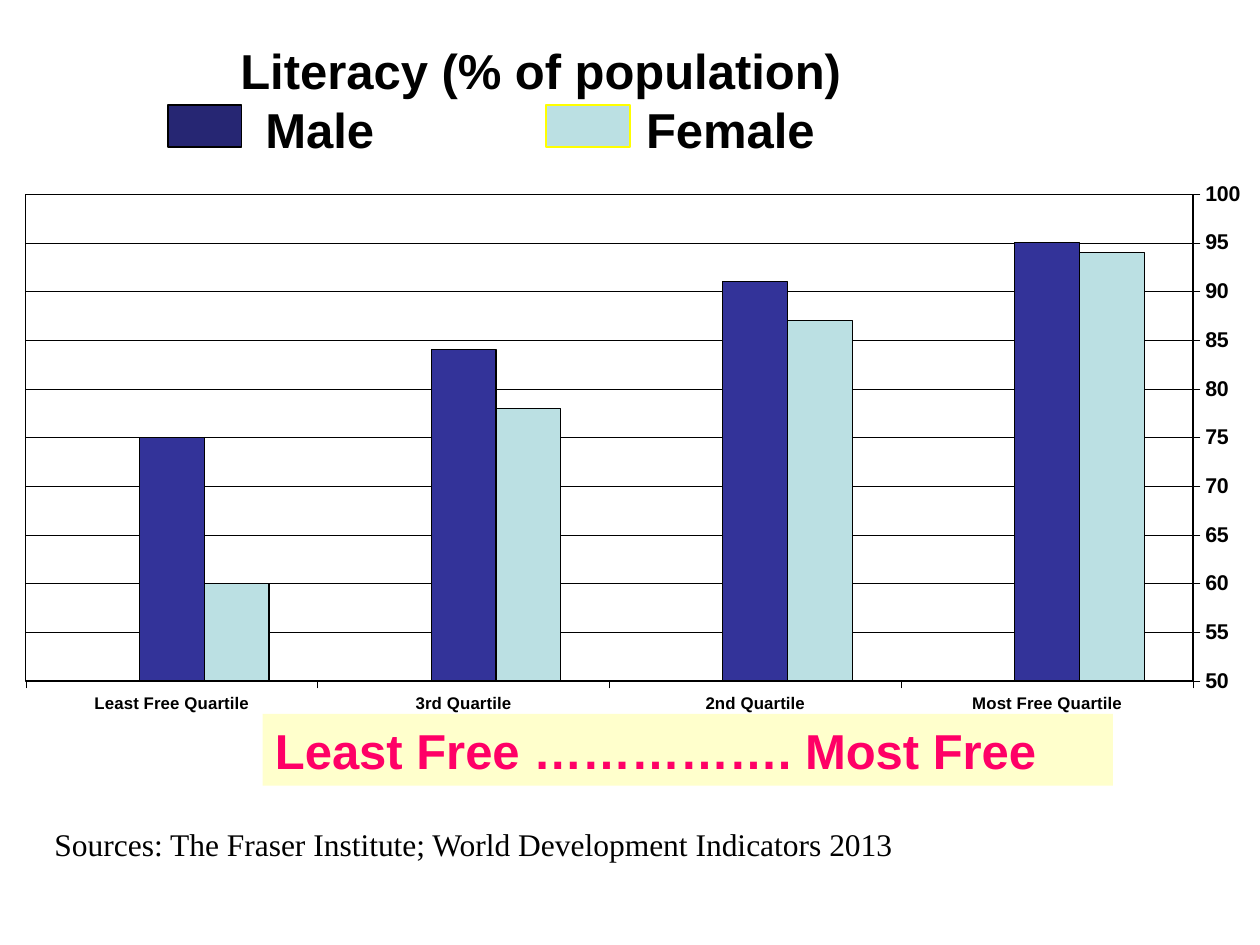
from lxml.etree import SubElement
from pptx import Presentation
from pptx.chart.data import CategoryChartData
from pptx.dml.color import RGBColor
from pptx.enum.chart import XL_CHART_TYPE, XL_TICK_LABEL_POSITION, XL_TICK_MARK
from pptx.enum.shapes import MSO_SHAPE
from pptx.enum.text import MSO_ANCHOR, MSO_AUTO_SIZE, PP_ALIGN
from pptx.oxml import parse_xml
from pptx.oxml.ns import nsdecls, qn
from pptx.util import Pt


def rgb(hex_string):
    return RGBColor.from_string(hex_string)


def style(font, color, **values):
    for name, value in values.items():
        setattr(font, name, value)
    font.color.rgb = rgb(color)


presentation = Presentation()
presentation.slide_width, presentation.slide_height = Pt(720), Pt(540)
slide = presentation.slides.add_slide(presentation.slide_layouts[5])
heading = {"name": "Arial", "size": Pt(28), "bold": True}

title = slide.shapes.title
title.left, title.top, title.width, title.height = Pt(12), Pt(18), Pt(594), Pt(78)
title_frame = title.text_frame
title_frame.auto_size = MSO_AUTO_SIZE.NONE
title_frame.vertical_anchor = MSO_ANCHOR.MIDDLE
title_frame.text = "Literacy (% of population)\n\tMale\tFemale"
measure, legend = title_frame.paragraphs
measure.alignment, legend.alignment = PP_ALIGN.CENTER, PP_ALIGN.LEFT
tab_stops = SubElement(legend._p.get_or_add_pPr(), qn("a:tabLst"))
for position in (132.5, 350):
    SubElement(tab_stops, qn("a:tab"), pos=str(Pt(position)), algn="l")
for paragraph in (measure, legend):
    style(paragraph.font, "000000", **heading)

literacy = CategoryChartData(number_format="0")
literacy.categories = ["Most Free Quartile", "2nd Quartile", "3rd Quartile", "Least Free Quartile"]
series_rows = [
    ("Series 1", (94, 87, 78, 60), "BBE0E3"),
    ("Series 2", (95, 91, 84, 75), "333399"),
    ("Series 3", (1, 2, 3, 4), "009999"),
]
for name, values, color in series_rows:
    literacy.add_series(name, values)
chart = slide.shapes.add_chart(
    XL_CHART_TYPE.COLUMN_CLUSTERED, Pt(12), Pt(96), Pt(708), Pt(324), literacy
).chart
chart.has_legend = chart.has_title = False
style(chart.font, "000000", name="Arial", size=Pt(12.2), bold=True)

columns = chart.plots[0]
columns.gap_width, columns.overlap, columns.vary_by_categories = 150, 0, False
for series, (name, values, color) in zip(columns.series, series_rows):
    series.format.fill.solid()
    series.format.fill.fore_color.rgb = rgb(color)
    series.format.line.color.rgb = rgb("000000")
    series.format.line.width = Pt(0.68)

quartiles, percent = chart.category_axis, chart.value_axis
quartiles.reverse_order = True
quartiles.tick_label_position = XL_TICK_LABEL_POSITION.LOW
percent.minimum_scale, percent.maximum_scale, percent.major_unit = 50, 100, 5
percent.has_major_gridlines = True
percent.tick_labels.number_format = "0"
percent.tick_labels.number_format_is_linked = False
for axis, size in ((quartiles, 9.6), (percent, 12.2)):
    axis.major_tick_mark, axis.minor_tick_mark = XL_TICK_MARK.OUTSIDE, XL_TICK_MARK.NONE
    style(axis.tick_labels.font, "000000", name="Arial", size=Pt(size), bold=True)
for line in (quartiles.format.line, percent.format.line, percent.major_gridlines.format.line):
    line.color.rgb = rgb("000000")
    line.width = Pt(0.17)

plot_area = chart._chartSpace.chart.plotArea
for layout in plot_area.findall(qn("c:layout")):
    plot_area.remove(layout)
plot_area.insert(0, parse_xml(
    f'<c:layout {nsdecls("c")}><c:manualLayout><c:layoutTarget val="inner"/>'
    '<c:xMode val="edge"/><c:yMode val="edge"/><c:x val="0.004"/><c:y val="0.046"/>'
    '<c:w val="0.942"/><c:h val="0.859"/></c:manualLayout></c:layout>'))
plot_area.append(parse_xml(
    f'<c:spPr {nsdecls("c", "a")}><a:noFill/><a:ln w="{Pt(0.68)}">'
    '<a:solidFill><a:srgbClr val="000000"/></a:solidFill></a:ln></c:spPr>'))

boxes = [
    (150, 408, 486, 41, "FFFFCC", None),
    (96, 60, 42, 24, "262673", "000000"),
    (312, 60, 48, 24, "BBE0E3", "FFFF00"),
]
rectangles = []
for left, top, width, height, fill, outline in boxes:
    box = slide.shapes.add_shape(MSO_SHAPE.RECTANGLE, Pt(left), Pt(top), Pt(width), Pt(height))
    box.shadow.inherit = False
    box.fill.solid()
    box.fill.fore_color.rgb = rgb(fill)
    if outline:
        box.line.color.rgb = rgb(outline)
        box.line.width = Pt(0.75)
    else:
        box.line.fill.background()
    rectangles.append(box)

freedom_scale = rectangles[0]
sources = slide.shapes.add_textbox(Pt(24), Pt(468), Pt(696), Pt(29))
captions = [
    (freedom_scale, "Least Free ……………. Most Free", "FF0066", heading),
    (sources, "Sources: The Fraser Institute; World Development Indicators 2013", "000000",
     {"name": "Times New Roman", "size": Pt(18)}),
]
for holder, wording, color, font_values in captions:
    holder.text_frame.word_wrap = True
    holder.text_frame.text = wording
    caption = holder.text_frame.paragraphs[0]
    caption.alignment = PP_ALIGN.LEFT
    style(caption.font, color, **font_values)

presentation.save("out.pptx")
